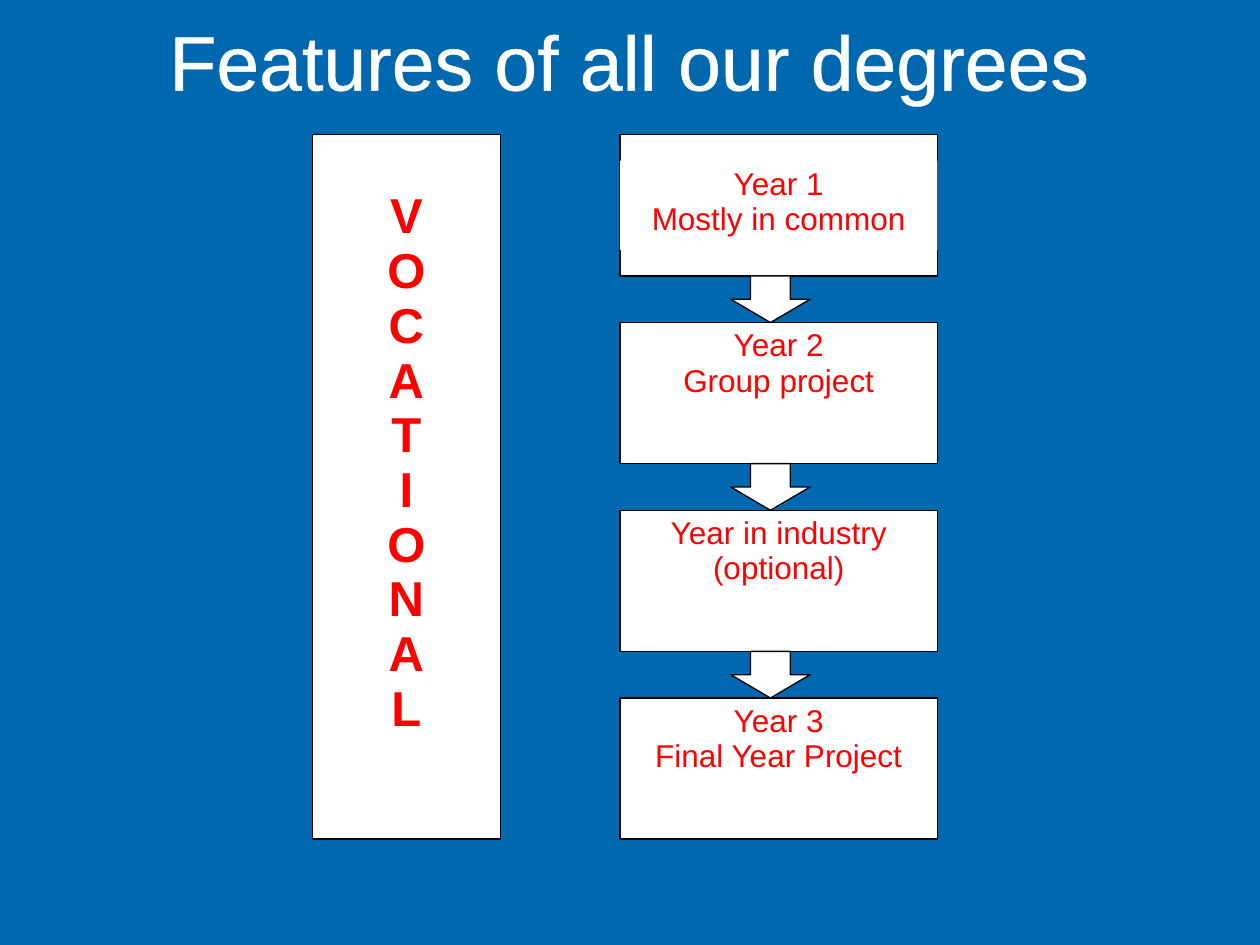
from lxml import etree
from pptx import Presentation
from pptx.dml.color import RGBColor
from pptx.enum.shapes import MSO_SHAPE
from pptx.enum.text import MSO_ANCHOR, PP_ALIGN
from pptx.oxml.ns import qn
from pptx.util import Inches, Pt

RECTANGLE, DOWN_ARROW = MSO_SHAPE.RECTANGLE, MSO_SHAPE.DOWN_ARROW
CENTER, TOP, MIDDLE = PP_ALIGN.CENTER, MSO_ANCHOR.TOP, MSO_ANCHOR.MIDDLE

TITLE = "Features of all our degrees"
BANNER = "VOCATIONAL"
STAGES = [
    ("Year 1", "Mostly in common"),
    ("Year 2", "Group project"),
    ("Year in industry", "(optional)"),
    ("Year 3", "Final Year Project"),
]

COLORS = {"background": "0068AE", "panel": "FFFFFF", "line": "000000",
          "title": "FFFFFF", "label": "FF0000"}
TITLE_FONT = {"name": "Arial", "size": Pt(44)}
BANNER_FONT = {"name": "Arial", "size": Pt(28), "bold": True}
STAGE_FONT = {"name": "Arial", "size": Pt(18)}

SLIDE_WIDTH, SLIDE_HEIGHT = 10, 7.5
TITLE_AREA = (0.5, 0.13, 9, 0.77)
FLOW_TOP, STAGE_HEIGHT, GAP = 1.07, 1.12, 0.37
STAGE_LEFT, STAGE_WIDTH = 4.92, 2.52
ARROW_LEFT, ARROW_WIDTH = 5.8, 0.63
BANNER_LEFT, BANNER_WIDTH = 2.48, 1.49
LETTERS_WIDTH, LETTERS_HEIGHT = 1.02, 4.81
FIRST_LABEL_HEIGHT = 0.71


def color(name):
    """Return the named colour."""
    return RGBColor.from_string(COLORS[name])


def add_panel(page, kind, area, outlined=True):
    """Add a white shape, with a thin line if outlined."""
    panel = page.shapes.add_shape(kind, *map(Inches, area))
    panel.shadow.inherit = False
    panel.fill.solid()
    panel.fill.fore_color.rgb = color("panel")
    if outlined:
        panel.line.color.rgb = color("line")
        panel.line.width = Pt(0.75)
    else:
        panel.line.fill.background()
    return panel


def write(box, lines, font, color_name, anchor=TOP):
    """Write centred lines and return their runs."""
    frame = box.text_frame
    frame.word_wrap = True
    frame.vertical_anchor = anchor
    spans = []
    for index, line in enumerate(lines):
        para = frame.add_paragraph() if index else frame.paragraphs[0]
        para.alignment = CENTER
        para.line_spacing = 0.93
        span = para.add_run()
        span.text = line
        for key, value in font.items():
            setattr(span.font, key, value)
        span.font.color.rgb = color(color_name)
        spans.append(span)
    return spans


def outline(span, color_name, width):
    """Give the letters of a run an outline."""
    line = etree.Element(qn("a:ln"), w=str(Pt(width)))
    fill = etree.SubElement(line, qn("a:solidFill"))
    etree.SubElement(fill, qn("a:srgbClr"), val=COLORS[color_name])
    span.font._element.insert(0, line)


def add_flow(page):
    """Add the stages from top to bottom with arrows between them."""
    for row, lines in enumerate(STAGES):
        top = FLOW_TOP + row * (STAGE_HEIGHT + GAP)
        box = add_panel(page, RECTANGLE, (STAGE_LEFT, top, STAGE_WIDTH, STAGE_HEIGHT))
        if row:
            add_panel(page, DOWN_ARROW, (ARROW_LEFT, top - GAP, ARROW_WIDTH, GAP))
        else:
            label_top = top + (STAGE_HEIGHT - FIRST_LABEL_HEIGHT) / 2
            area = (STAGE_LEFT, label_top, STAGE_WIDTH, FIRST_LABEL_HEIGHT)
            box = add_panel(page, RECTANGLE, area, outlined=False)
        write(box, lines, STAGE_FONT, "label")


def add_banner(page):
    """Add the tall panel with one letter on each line."""
    height = len(STAGES) * (STAGE_HEIGHT + GAP) - GAP
    add_panel(page, RECTANGLE, (BANNER_LEFT, FLOW_TOP, BANNER_WIDTH, height))
    left = BANNER_LEFT + (BANNER_WIDTH - LETTERS_WIDTH) / 2
    top = FLOW_TOP + (height - LETTERS_HEIGHT) / 2
    area = (left, top, LETTERS_WIDTH, LETTERS_HEIGHT)
    letters = page.shapes.add_textbox(*map(Inches, area))
    write(letters, BANNER, BANNER_FONT, "label")


def main():
    """Build the slide on degree features."""
    deck = Presentation()
    deck.slide_width, deck.slide_height = Inches(SLIDE_WIDTH), Inches(SLIDE_HEIGHT)
    page = deck.slides.add_slide(deck.slide_layouts[6])
    page.background.fill.solid()
    page.background.fill.fore_color.rgb = color("background")
    heading = page.shapes.add_textbox(*map(Inches, TITLE_AREA))
    for span in write(heading, [TITLE], TITLE_FONT, "title", MIDDLE):
        outline(span, "title", 1.45)
    add_flow(page)
    add_banner(page)
    deck.save("out.pptx")


if __name__ == "__main__":
    main()
